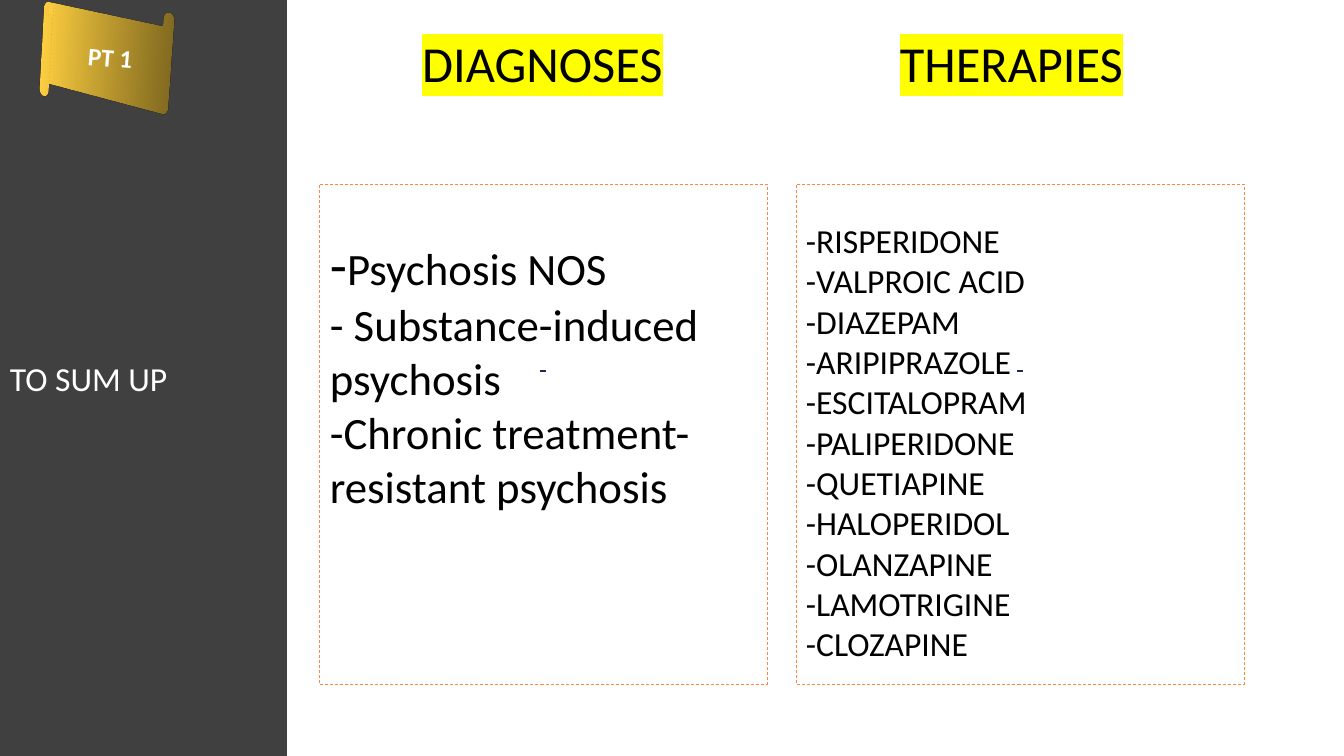
from lxml import etree
from pptx import Presentation
from pptx.dml.color import RGBColor
from pptx.enum.dml import MSO_LINE
from pptx.enum.shapes import MSO_CONNECTOR, MSO_SHAPE
from pptx.enum.text import MSO_ANCHOR, PP_ALIGN
from pptx.oxml import parse_xml
from pptx.oxml.ns import qn
from pptx.util import Pt

# Content; lengths in px
SIDEBAR_TEXT = "TO SUM UP"
BADGE_TEXT = " PT 1"
DIAGNOSES = ["Psychosis NOS", "- Substance-induced psychosis",
             "-Chronic treatment-resistant psychosis"]
THERAPIES = ["-RISPERIDONE", "-VALPROIC ACID", "-DIAZEPAM", "-ARIPIPRAZOLE",
             "-ESCITALOPRAM", "-PALIPERIDONE", "-QUETIAPINE", "-HALOPERIDOL",
             "-OLANZAPINE", "-LAMOTRIGINE", "-CLOZAPINE"]
COLUMNS = [("DIAGNOSES", 370, 319), ("THERAPIES", 839, 796)]
PANEL_TOP, PANEL_WIDTH, PANEL_HEIGHT = 184, 448, 500
MARK_Y, MARK_WIDTH = 371, 6
FONT = "Calibri"
DRAWING_NS = "http://schemas.openxmlformats.org/drawingml/2006/main"


def px(length):
    return round(length * 914400 / 100.8)


def color(value):
    return RGBColor.from_string(value)


def style(font, size, value="000000", bold=None):
    font.name, font.size, font.bold = FONT, Pt(size), bold
    font.color.rgb = color(value)


def add_box(kind, left, top, width, height, fill=None):
    shape = slide.shapes.add_shape(kind, px(left), px(top), px(width), px(height))
    shape.shadow.inherit = False
    shape.line.fill.background()
    if fill:
        shape.fill.solid()
        shape.fill.fore_color.rgb = color(fill)
    else:
        shape.fill.background()
    return shape


def add_text(left, top, width, height):
    frame = slide.shapes.add_textbox(px(left), px(top), px(width), px(height)).text_frame
    frame.word_wrap = True
    return frame


presentation = Presentation()
presentation.slide_width, presentation.slide_height = px(1344), px(756)
slide = presentation.slides.add_slide(presentation.slide_layouts[6])

# Sidebar
sidebar = add_box(MSO_SHAPE.RECTANGLE, 0, 0, 287, 756, "404040")
sidebar.text_frame.vertical_anchor = MSO_ANCHOR.MIDDLE
paragraph = sidebar.text_frame.paragraphs[0]
paragraph.text = SIDEBAR_TEXT
paragraph.alignment = PP_ALIGN.LEFT
style(paragraph.font, 24, "FFFFFF")

# Column headings, dashed panels and their small centre marks
for heading, heading_left, panel_left in COLUMNS:
    panel = add_box(MSO_SHAPE.RECTANGLE, panel_left, PANEL_TOP, PANEL_WIDTH, PANEL_HEIGHT)
    panel.line.color.rgb = color("FE8542")
    panel.line.width = Pt(0.5)
    panel.line.dash_style = MSO_LINE.DASH

    mark_left = panel_left + (PANEL_WIDTH - MARK_WIDTH) // 2
    mark = slide.shapes.add_connector(MSO_CONNECTOR.STRAIGHT, px(mark_left), px(MARK_Y),
                                      px(mark_left + MARK_WIDTH), px(MARK_Y))
    mark.line.color.rgb = color("1F2A5A")
    mark.line.width = Pt(1)
    etree.SubElement(mark._element.spPr, qn("a:effectLst"))

    paragraph = add_text(heading_left, 27, 345, 120).paragraphs[0]
    paragraph.alignment = PP_ALIGN.CENTER
    run = paragraph.add_run()
    run.text = heading
    style(run.font, 36)
    run.font._element.find(qn("a:solidFill")).addnext(parse_xml(
        f'<a:highlight xmlns:a="{DRAWING_NS}"><a:srgbClr val="FFFF00"/></a:highlight>'))

# Diagnoses: one paragraph with line breaks, led by a larger dash
paragraph = add_text(320, 225, 531, 476).paragraphs[0]
paragraph.space_after = Pt(6)
dash = paragraph.add_run()
dash.text = "-"
style(dash.font, 40)
for index, diagnosis in enumerate(DIAGNOSES):
    if index:
        paragraph.add_line_break()
    run = paragraph.add_run()
    run.text = diagnosis
    style(run.font, 32)

# Therapies
frame = add_text(796, PANEL_TOP, 449, PANEL_HEIGHT)
frame.margin_top = px(36)
for index, therapy in enumerate(THERAPIES):
    paragraph = frame.add_paragraph() if index else frame.paragraphs[0]
    paragraph.text = therapy
    style(paragraph.font, 24)

# Scroll badge, turned in perspective
badge = add_box(MSO_SHAPE.HORIZONTAL_SCROLL, 14, 0, 180, 113)
badge.line.color.rgb = color("EF5601")
badge.line.width = Pt(1)
badge.fill.gradient()
badge.fill.gradient_angle = 0
for stop, position, value in zip(badge.fill.gradient_stops, (0, 1), ("FECF40", "846C21")):
    stop.position = position
    stop.color.rgb = color(value)
badge_properties = badge._element.spPr
badge_properties.append(parse_xml(
    f'<a:scene3d xmlns:a="{DRAWING_NS}">'
    '<a:camera prst="perspectiveContrastingLeftFacing"/>'
    '<a:lightRig rig="threePt" dir="t"/></a:scene3d>'))
etree.SubElement(badge_properties, qn("a:sp3d"))
badge.text_frame.vertical_anchor = MSO_ANCHOR.MIDDLE
paragraph = badge.text_frame.paragraphs[0]
paragraph.text = BADGE_TEXT
paragraph.alignment = PP_ALIGN.CENTER
style(paragraph.font, 18, "FFFFFF", True)

presentation.save("out.pptx")
